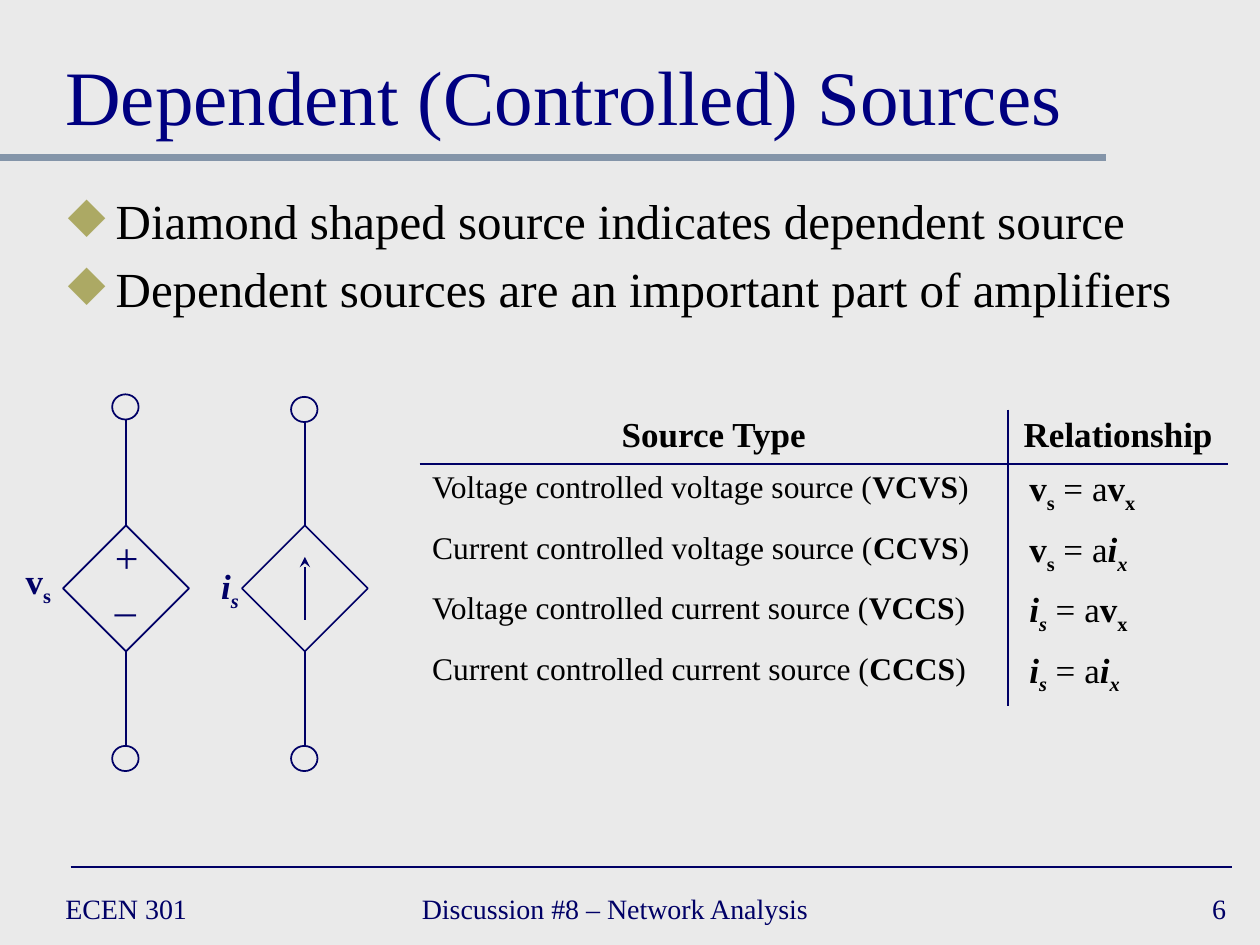
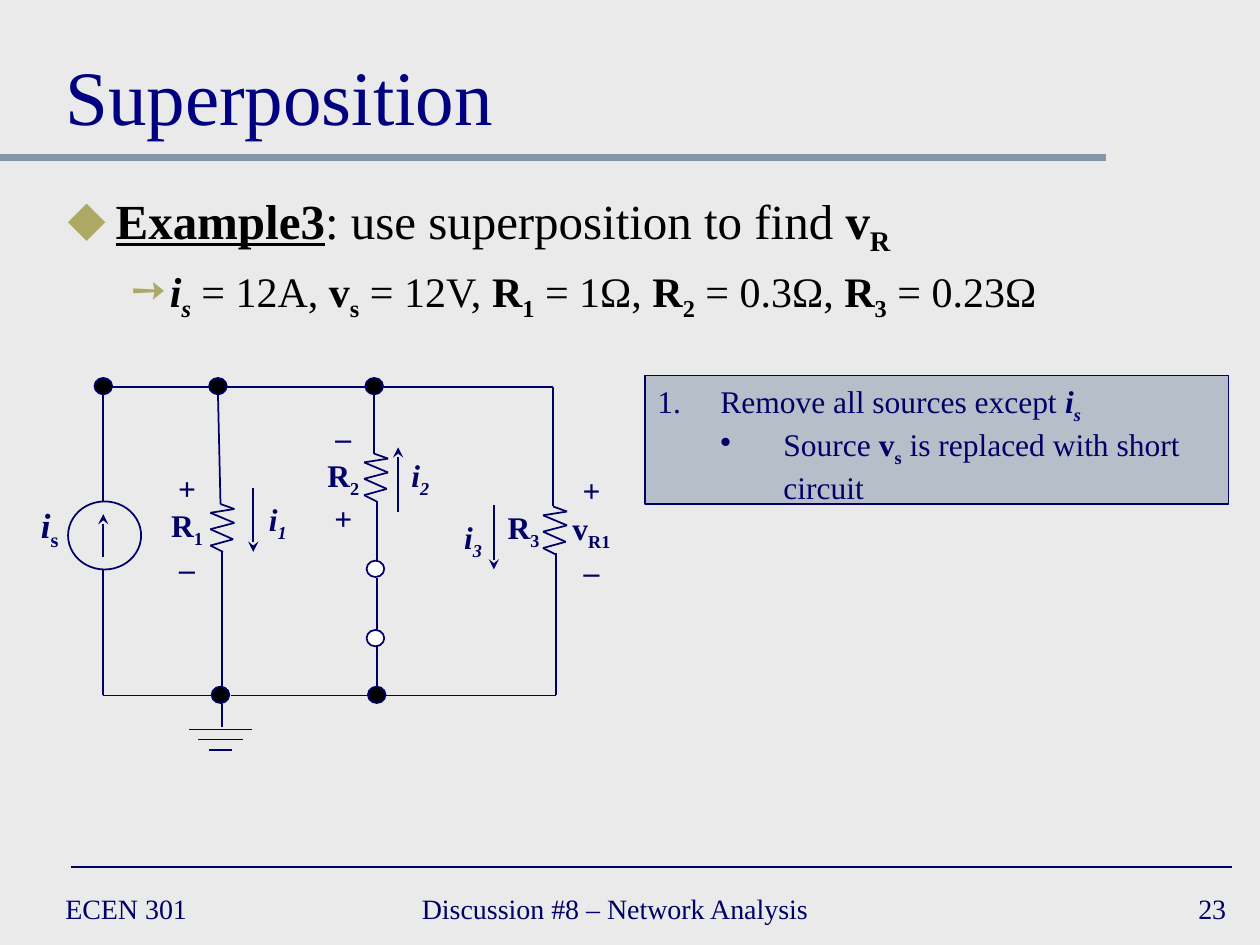
"""Build two circuit-analysis slides: dependent sources and superposition."""
import itertools

import pptx
import pptx.dml.color
import pptx.enum.shapes
import pptx.enum.text
import pptx.oxml
import pptx.oxml.ns
import pptx.util
from pptx.util import Inches

SHAPE = pptx.enum.shapes.MSO_SHAPE
ALIGN = pptx.enum.text.PP_ALIGN
ANCHOR = pptx.enum.text.MSO_ANCHOR
FONT = "Times New Roman"
NAVY, TITLE, SLATE, OLIVE = "000066", "000080", "8495A9", "ACA964"
BLACK, WHITE, PAPER = "000000", "FFFFFF", "EAEAEA"


def symbol(name, index, flags="b"):
    return [(name, flags), (index, flags + "_")]


def plain(text):
    return [(text, "")]


V_S, V_X = symbol("v", "s"), symbol("v", "x")
I_S, I_X = symbol("i", "s", "bi"), symbol("i", "x", "bi")
R_1, R_2, R_3 = (symbol("R", n) for n in "123")
PLUS, MINUS = [("+", "b")], [("–", "b")]

COURSE, LECTURE = "ECEN 301", "Discussion #8 – Network Analysis"
DIAMOND = dict(char="◆", left=0.38, hang=0.38, color=OLIVE)
ARROW = dict(char="➙", left=0.81, hang=0.31, color=OLIVE, level=1)
NUMBER = dict(number="arabicPeriod", left=0.5, hang=0.5)
DOT = dict(char="•", left=1, hang=0.5, level=1)

SOURCE_POINTS = [
    (plain("Diamond shaped source indicates dependent source"), 28, DIAMOND),
    (plain("Dependent sources are an important part of amplifiers"), 28, DIAMOND),
]
SOURCE_TYPES = [
    ("Voltage controlled voltage source (", "VCVS", V_S, V_X),
    ("Current controlled voltage source (", "CCVS", V_S, I_X),
    ("Voltage controlled current source (", "VCCS", I_S, V_X),
    ("Current controlled current source (", "CCCS", I_S, I_X),
]
EXAMPLE = [
    ([("Example3", "bu"), (": use superposition to find ", "")] + symbol("v", "R"), 28, DIAMOND),
    (I_S + plain(" = 12A, ") + V_S + plain(" = 12V, ") + R_1 + plain(" = 1Ω, ")
     + R_2 + plain(" = 0.3Ω, ") + R_3 + plain(" = 0.23Ω"), 24, ARROW),
]
STEPS = [
    (plain("Remove all sources except ") + I_S, 18, NUMBER),
    (plain("Source ") + V_S + plain(" is replaced with short circuit"), 18, DOT),
]

ZIGZAG = [(0, 0), (0.11, 0.04), (-0.08, 0.07), (0.11, 0.15), (-0.08, 0.2),
          (0.1, 0.28), (-0.08, 0.33), (0.02, 0.38)]
RESISTORS = [(1.75, 4), (2.97, 3.6), (4.39, 4.02)]
WIRES = [
    [(1.68, 5.52), (0.82, 5.52), (0.82, 4.52)],
    [(0.82, 3.98), (0.82, 3.13)],
    [(0.89, 3.07), (1.66, 3.07)],
    [(1.8, 3.07), (2.9, 3.07)],
    [(3.04, 3.07), (4.39, 3.07), (4.39, 4.02)],
    [(1.73, 3.13), (1.75, 4)],
    [(1.76, 4.38), (1.76, 5.45)],
    [(2.97, 3.13), (2.97, 3.6)],
    [(2.99, 3.98), (2.99, 4.45)],
    [(2.99, 4.59), (2.99, 5)],
    [(2.99, 5.13), (2.99, 5.45)],
    [(1.83, 5.52), (2.92, 5.52)],
    [(3.06, 5.52), (4.41, 5.52), (4.41, 4.39)],
    [(1.76, 5.52), (1.76, 5.77)],
]
GROUND = [(0.25, 5.79), (0.18, 5.87), (0.09, 5.95)]
CURRENTS = [(2.01, 3.87, 4.38), (3.16, 4.06, 3.55), (3.92, 4.01, 4.52), (0.82, 4.42, 4.08)]
NODES = [(0.75, 3, BLACK), (1.66, 3, BLACK), (2.9, 3, BLACK), (1.68, 5.45, BLACK),
         (2.92, 5.45, BLACK), (2.91, 4.45, WHITE), (2.91, 5, WHITE)]
LABELS = [
    ((1.25, 3.67, 0.47, 1), [PLUS, R_1, MINUS], 18),
    ((2.49, 3.27, 0.47, 1), [MINUS, R_2, PLUS], 18),
    ((3.92, 3.98, 0.47, 0.4), [R_3], 18),
    ((4.43, 3.69, 0.53, 1), [PLUS, symbol("v", "R1"), MINUS], 18),
    ((2.03, 3.92, 0.35, 0.4), [symbol("i", "1", "bi")], 18),
    ((3.16, 3.57, 0.35, 0.4), [symbol("i", "2", "bi")], 18),
    ((3.58, 4.06, 0.35, 0.4), [symbol("i", "3", "bi")], 18),
    ((0.22, 3.95, 0.35, 0.43), [[("i", "bi"), ("s", "b_")]], 20),
]


def rgb(color):
    return pptx.dml.color.RGBColor.from_string(color)


def add_xml(parent, tag, **attrs):
    el = pptx.oxml.parse_xml(f"<a:{tag} {pptx.oxml.ns.nsdecls('a')}/>")
    for name, value in attrs.items():
        el.set(name, str(value))
    parent.append(el)
    return el


def set_bullet(p, left, hang, char=None, number=None, color=None, level=0):
    p.level = level
    pPr = p._p.get_or_add_pPr()
    pPr.set("marL", str(Inches(left)))
    pPr.set("indent", str(-Inches(hang)))
    if color:
        add_xml(add_xml(pPr, "buClr"), "srgbClr", val=color)
    if number:
        add_xml(pPr, "buAutoNum", type=number)
    else:
        add_xml(pPr, "buChar", char=char)


def write_runs(p, runs, size, color, align=ALIGN.LEFT):
    p.alignment = align
    for text, flags in runs:
        r = p.add_run()
        r.text = text
        f = r.font
        f.name, f.size, f.color.rgb = FONT, pptx.util.Pt(size), rgb(color)
        f.bold, f.italic, f.underline = "b" in flags, "i" in flags, "u" in flags
        if "_" in flags:
            f._element.set("baseline", "-25000")


def write_list(tf, items, color, spacing=0.0):
    tf.word_wrap = True
    for i, (runs, size, bullet) in enumerate(items):
        p = tf.paragraphs[0] if i == 0 else tf.add_paragraph()
        set_bullet(p, **bullet)
        if i and spacing:
            p.space_before = pptx.util.Pt(round(size * spacing, 1))
        write_runs(p, runs, size, color)


def text_box(shapes, box, lines, size, color=NAVY, align=ALIGN.CENTER,
             anchor=ANCHOR.TOP, wrap=False):
    tf = shapes.add_textbox(*map(Inches, box)).text_frame
    tf.word_wrap, tf.vertical_anchor = wrap, anchor
    for i, runs in enumerate(lines):
        p = tf.paragraphs[0] if i == 0 else tf.add_paragraph()
        write_runs(p, runs, size, color, align)


def wire(shapes, points, color=NAVY, width=1, arrow=False):
    for start, end in itertools.pairwise(points):
        c = shapes.add_connector(pptx.enum.shapes.MSO_CONNECTOR.STRAIGHT,
                                 *map(Inches, start + end))
        c.line.color.rgb, c.line.width = rgb(color), pptx.util.Pt(width)
        spPr = c._element.spPr
        if arrow:
            add_xml(spPr.find(pptx.oxml.ns.qn("a:ln")), "tailEnd", type="stealth")
        add_xml(spPr, "effectLst")


def outline(shapes, kind, box, fill=None):
    sp = shapes.add_shape(kind, *map(Inches, box))
    sp.shadow.inherit = False
    sp.line.color.rgb, sp.line.width = rgb(NAVY), pptx.util.Pt(1)
    if fill:
        sp.fill.solid()
        sp.fill.fore_color.rgb = rgb(fill)
    else:
        sp.fill.background()
    return sp


def new_slide(prs, title, number, points, body_box):
    s = prs.slides.add_slide(prs.slide_layouts[6])
    s.background.fill.solid()
    s.background.fill.fore_color.rgb = rgb(PAPER)
    wire(s.shapes, [(0, 1.25), (8.78, 1.25)], SLATE, 4)
    wire(s.shapes, [(0.56, 6.88), (9.78, 6.88)])
    for left, width, text, align in [(0.42, 2.17, COURSE, ALIGN.LEFT),
                                     (3.25, 3.83, LECTURE, ALIGN.LEFT),
                                     (7.75, 2.08, number, ALIGN.RIGHT)]:
        text_box(s.shapes, (left, 7, width, 0.42), [plain(text)], 16,
                 align=align, anchor=ANCHOR.MIDDLE, wrap=True)
    text_box(s.shapes, (0.42, 0.17, 9.17, 1), [plain(title)], 44, TITLE,
             ALIGN.LEFT, ANCHOR.BOTTOM, wrap=True)
    body = s.shapes.add_textbox(*map(Inches, body_box))
    write_list(body.text_frame, points, BLACK, spacing=0.2)
    return s


def dependent_source(s, x, ring_top):
    shapes = s.shapes.add_group_shape().shapes
    outline(shapes, SHAPE.DIAMOND, (x - 0.5, 4.17, 1, 1))
    for top in (ring_top, 5.92):
        outline(shapes, SHAPE.OVAL, (x - 0.11, top, 0.21, 0.2))
    wire(shapes, [(x, 4.17), (x, ring_top + 0.2)])
    wire(shapes, [(x, 5.92), (x, 5.17)])
    return shapes


def set_borders(cell, **shown):
    tcPr = cell._tc.get_or_add_tcPr()
    for side in "LRTB":
        ln = add_xml(tcPr, "ln" + side, w=pptx.util.Pt(1))
        if shown[side]:
            add_xml(add_xml(ln, "solidFill"), "srgbClr", val=NAVY)
        else:
            add_xml(ln, "noFill")
    cell.fill.background()


def source_table(s):
    rows = [[[("Source Type", "b")], [("Relationship", "b")]]]
    for text, short, result, control in SOURCE_TYPES:
        rows.append([[(text, ""), (short, "b"), (")", "")], result + plain(" = a") + control])
    box = (3.33, 3.25, 6.42, 2.35)
    table = s.shapes.add_table(len(rows), 2, *map(Inches, box)).table
    table.first_row = table.horz_banding = False
    for column, width in zip(table.columns, (4.67, 1.75)):
        column.width = Inches(width)
    for r, row in enumerate(rows):
        table.rows[r].height = Inches(0.48 if r else 0.43)
        for c, runs in enumerate(row):
            cell = table.cell(r, c)
            if r and c:
                cell.margin_left = Inches(0.17)
            set_borders(cell, L=c == 1, R=c == 0, T=r == 1, B=r == 0)
            write_runs(cell.text_frame.paragraphs[0], runs, 18 if r and not c else 20,
                       BLACK, ALIGN.LEFT if r else ALIGN.CENTER)


def sources_slide(prs):
    s = new_slide(prs, "Dependent (Controlled) Sources", "6", SOURCE_POINTS,
                  (0.44, 1.46, 8.97, 1.38))
    voltage = dependent_source(s, 1, 3.13)
    text_box(voltage, (0.81, 4.17, 0.39, 0.5), [plain("+")], 24)
    text_box(voltage, (0.81, 4.47, 0.37, 0.5), [plain("_")], 24)
    current = dependent_source(s, 2.42, 3.15)
    wire(current, [(2.42, 4.92), (2.42, 4.42)], arrow=True)
    source_table(s)
    text_box(s.shapes, (0.1, 4.39, 0.41, 0.43), [V_S], 20)
    text_box(s.shapes, (1.65, 4.43, 0.35, 0.43), [I_S], 20)


def superposition_slide(prs):
    s = new_slide(prs, "Superposition", "23", EXAMPLE, (0.44, 1.46, 9.14, 1.54))
    for points in WIRES:
        wire(s.shapes, points)
    for x, y in RESISTORS:
        wire(s.shapes.add_group_shape().shapes, [(x + dx, y + dy) for dx, dy in ZIGZAG])
    ground = s.shapes.add_group_shape().shapes
    for half, y in GROUND:
        wire(ground, [(1.75 - half, y), (1.75 + half, y)])
    outline(s.shapes, SHAPE.OVAL, (0.54, 3.98, 0.58, 0.54))
    for x, start, end in CURRENTS:
        wire(s.shapes, [(x, start), (x, end)], arrow=True)
    for x, y, fill in NODES:
        outline(s.shapes, SHAPE.OVAL, (x, y, 0.14, 0.13), fill)
    for box, lines, size in LABELS:
        text_box(s.shapes, box, lines, size)
    steps = outline(s.shapes, SHAPE.RECTANGLE, (5.12, 2.98, 4.63, 1.02), SLATE)
    tint = steps._element.spPr.find(pptx.oxml.ns.qn("a:solidFill"))[0]
    add_xml(tint, "alpha", val=50000)
    steps.text_frame.vertical_anchor = ANCHOR.TOP
    write_list(steps.text_frame, STEPS, NAVY)


def main():
    prs = pptx.Presentation()
    prs.slide_width, prs.slide_height = Inches(10), Inches(7.5)
    sources_slide(prs)
    superposition_slide(prs)
    prs.save("out.pptx")


if __name__ == "__main__":
    main()
